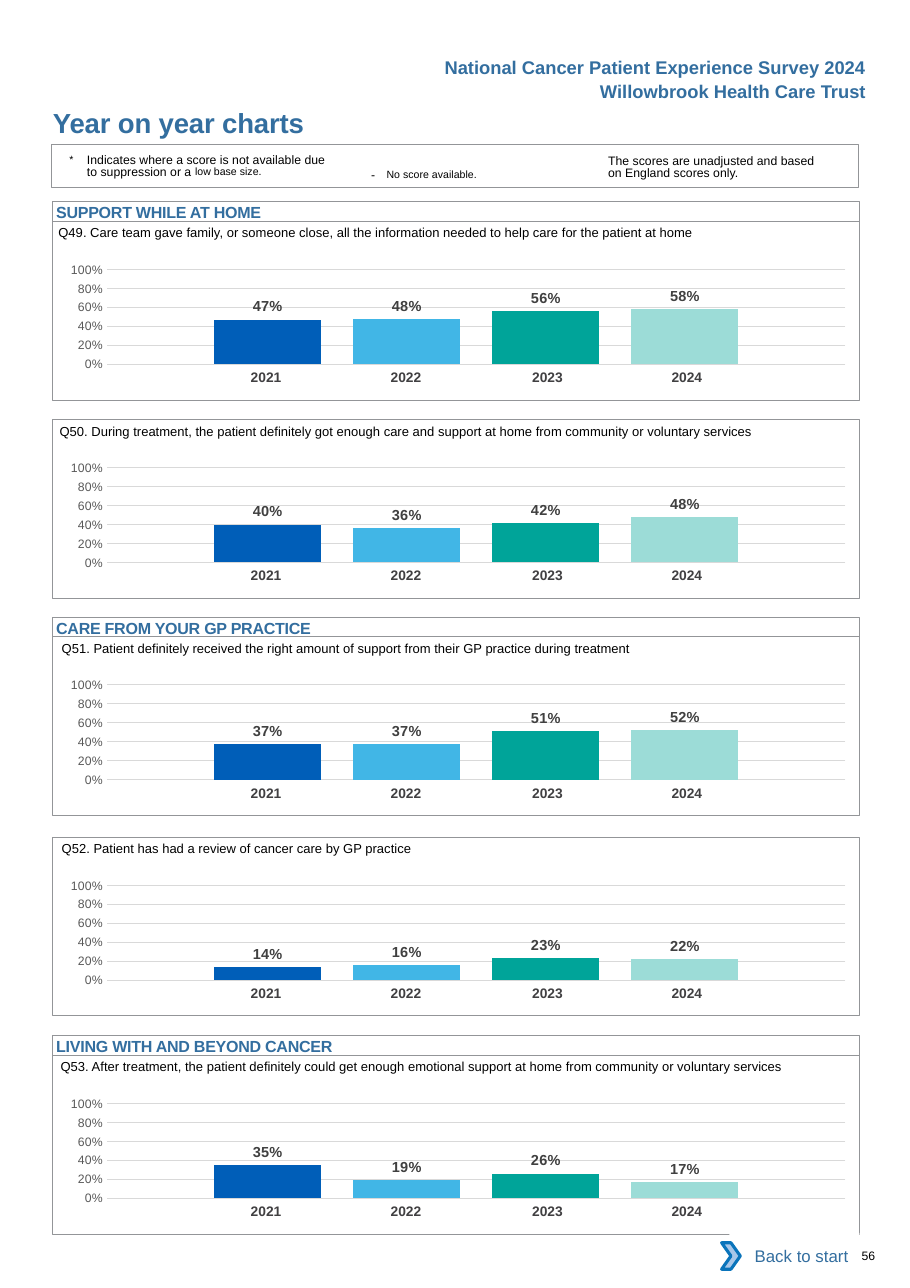
from lxml.etree import SubElement
from pptx import Presentation
from pptx.chart.data import CategoryChartData
from pptx.dml.color import RGBColor
from pptx.enum.chart import XL_CHART_TYPE as ChartType, XL_LABEL_POSITION as LabelPosition
from pptx.enum.chart import XL_TICK_MARK as TickMark
from pptx.enum.shapes import MSO_SHAPE as Preset
from pptx.enum.text import MSO_ANCHOR as Anchor, MSO_AUTO_SIZE as AutoSize, PP_ALIGN as Align
from pptx.oxml.ns import qn
from pptx.util import Inches, Pt

# Content
TITLE = "Year on year charts"
HEADERS = [(0.46, "National Cancer Patient Experience Survey 2024"),
           (0.68, "Willowbrook Health Care Trust")]
YEARS = ["2021", "2022", "2023", "2024"]
# Box top, section heading, question left, question, scores by year
PANELS = [
    (2.01, "SUPPORT WHILE AT HOME", 0.53,
     "Q49. Care team gave family, or someone close, all the information needed "
     "to help care for the patient at home", (0.47, 0.48, 0.56, 0.58)),
    (3.81, None, 0.54,
     "Q50. During treatment, the patient definitely got enough care and support "
     "at home from community or voluntary services", (0.40, 0.36, 0.42, 0.48)),
    (5.78, "CARE FROM YOUR GP PRACTICE", 0.56,
     "Q51. Patient definitely received the right amount of support from their "
     "GP practice during treatment", (0.37, 0.37, 0.51, 0.52)),
    (7.60, None, 0.56,
     "Q52. Patient has had a review of cancer care by GP practice",
     (0.14, 0.16, 0.23, 0.22)),
    (9.58, "LIVING WITH AND BEYOND CANCER", 0.55,
     "Q53. After treatment, the patient definitely could get enough emotional "
     "support at home from community or voluntary services", (0.35, 0.19, 0.26, 0.17)),
]
COLORS = {"heading": "336E9F", "text": "000000", "border": "939598", "year": "414042",
          "axis": "595959", "label": "404040", "grid": "D9D9D9", "white": "FFFFFF",
          "arrow": "A8C7E9", "arrow_line": "0A74BB"}
SERIES_COLORS = ["005EB8", "41B6E6", "00A499", "9CDCD7"]

# Formats
HEADER = {"size": Pt(12), "bold": True, "color": "heading"}
TITLE_FORMAT = {"size": Pt(18), "bold": True, "color": "heading", "spc": -10}
SECTION = {"size": Pt(10.5), "bold": True, "color": "heading", "spc": -15}
QUESTION = {"size": Pt(8.5), "color": "text"}
NOTE = {"size": Pt(8), "color": "text"}
YEAR = {"size": Pt(9), "bold": True, "color": "year"}
AXIS = {"size": Pt(8), "color": "axis"}
LABEL = {"size": Pt(9.5), "bold": True, "color": "label"}
LINK = {"size": Pt(11), "color": "heading"}
RAISED = {"size": Pt(12), "color": "text", "baseline": 3000}
BOX_LEFT, BOX_WIDTH = 0.48, 7.32
NO_TABLE_STYLE = "{2D5ABB26-0587-4C30-8999-92F81FD0307C}"


def rgb(name):
    return RGBColor.from_string(COLORS.get(name, name))


def format_font(font, values):
    font.name = "Arial"
    for key, value in values.items():
        if key == "color":
            font.color.rgb = rgb(value)
        elif key in ("size", "bold"):
            setattr(font, key, value)


def write(frame, runs, align=Align.LEFT, insets=(0, 0, 0, 0), anchor=Anchor.TOP):
    settings = {"word_wrap": True, "auto_size": AutoSize.NONE, "vertical_anchor": anchor}
    sides = ("margin_left", "margin_top", "margin_right", "margin_bottom")
    settings.update(zip(sides, map(Inches, insets)))
    for key, value in settings.items():
        setattr(frame, key, value)
    paragraph = frame.paragraphs[0]
    paragraph.alignment = align
    for text, values in runs:
        run = paragraph.add_run()
        run.text = text
        format_font(run.font, values)
        for key in ("spc", "baseline"):
            if key in values:
                run._r.get_or_add_rPr().set(key, str(values[key]))
    return paragraph


def add_text(slide, at, runs, **options):
    box = slide.shapes.add_textbox(*map(Inches, at))
    return write(box.text_frame, runs, **options)


def add_preset(slide, preset, at, fill=None, line=None, width=0.5):
    shape = slide.shapes.add_shape(preset, *map(Inches, at))
    shape.shadow.inherit = False
    if fill:
        shape.fill.solid()
        shape.fill.fore_color.rgb = rgb(fill)
    else:
        shape.fill.background()
    if line:
        shape.line.color.rgb = rgb(line)
        shape.line.width = Pt(width)
    else:
        shape.line.fill.background()
    return shape


def add_years(slide, top):
    frame = slide.shapes.add_table(1, len(YEARS), Inches(1.73), Inches(top),
                                   Inches(5.15), Inches(0.27))
    table = frame.table
    table.first_row = table.horz_banding = False
    table._tbl.tblPr.find(qn("a:tableStyleId")).text = NO_TABLE_STYLE
    columns = zip(YEARS, (1.27, 1.27, 1.34, 1.27), (0, 0, 0.04, 0.12))
    for index, (year, width, right) in enumerate(columns):
        table.columns[index].width = Inches(width)
        cell = table.cell(0, index)
        cell.fill.background()
        cell.margin_left, cell.margin_right = Inches(0.1), Inches(right)
        paragraph = cell.text_frame.paragraphs[0]
        paragraph.alignment = Align.CENTER
        run = paragraph.add_run()
        run.text = year
        format_font(run.font, YEAR)


def add_scores(slide, top, scores):
    data = CategoryChartData(number_format="0%")
    data.categories = ["1"]
    for year, score in zip(YEARS, scores):
        data.add_series(year, [score])
    chart = slide.shapes.add_chart(ChartType.COLUMN_CLUSTERED, Inches(0.39), Inches(top),
                                   Inches(7.32), Inches(1.29), data).chart
    chart.has_legend = chart.has_title = False
    chart.font.name, chart.font.size = "Calibri", Pt(10)
    chart.category_axis.visible = False
    axis = chart.value_axis
    for key, value in {"minimum_scale": 0, "maximum_scale": 1, "major_unit": 0.2,
                       "major_tick_mark": TickMark.NONE, "minor_tick_mark": TickMark.NONE,
                       "has_major_gridlines": True}.items():
        setattr(axis, key, value)
    axis.format.line.fill.background()
    axis.major_gridlines.format.line.color.rgb = rgb("grid")
    axis.major_gridlines.format.line.width = Pt(0.75)
    axis.tick_labels.number_format = "0%"
    axis.tick_labels.number_format_is_linked = False
    format_font(axis.tick_labels.font, AXIS)
    plot = chart.plots[0]
    plot.gap_width, plot.overlap, plot.vary_by_categories = 200, -30, False
    for series, color in zip(plot.series, SERIES_COLORS):
        series.format.fill.solid()
        series.format.fill.fore_color.rgb = rgb(color)
        labels = series.data_labels
        for key, value in {"show_value": True, "position": LabelPosition.OUTSIDE_END,
                           "number_format": "0%", "number_format_is_linked": False}.items():
            setattr(labels, key, value)
        format_font(labels.font, LABEL)
    # Fixed inner plot area
    area = chart._chartSpace.chart.plotArea
    for old in area.findall(qn("c:layout")):
        area.remove(old)
    layout = SubElement(area, qn("c:layout"))
    area.insert(0, layout)
    manual = SubElement(layout, qn("c:manualLayout"))
    for tag, value in (("layoutTarget", "inner"), ("xMode", "edge"), ("yMode", "edge"),
                       ("x", 0.08), ("y", 0.145), ("w", 0.915), ("h", 0.666)):
        SubElement(manual, qn("c:" + tag)).set("val", str(value))


def main():
    presentation = Presentation()
    presentation.slide_width, presentation.slide_height = Inches(8.26), Inches(11.69)
    slide = presentation.slides.add_slide(presentation.slide_layouts[5])

    # Title and header
    title = slide.shapes.title
    title.left, title.top, title.width, title.height = map(Inches, (0.47, 0.96, 4.5, 0.3))
    write(title.text_frame, [(TITLE, TITLE_FORMAT)], insets=(0.01, 0, 0, 0))
    for top, text in HEADERS:
        add_text(slide, (3.46, top, 4.5, 0.3), [(text, HEADER)], align=Align.RIGHT,
                 insets=(0.1, 0.05, 0.1, 0.05))

    # Notes on the scores
    add_preset(slide, Preset.RECTANGLE, (0.47, 1.31, 7.32, 0.39), line="border", width=0.75)
    suppressed = add_text(slide, (0.63, 1.38, 2.4, 0.3), [
        ("*\t", RAISED),
        ("Indicates where a score is not available due to suppression or a ", NOTE),
        ("low base size.", {**RAISED, "baseline": 7000})], insets=(0, 0.03, 0, 0))
    suppressed.line_spacing = Pt(8.1)
    properties = suppressed._p.get_or_add_pPr()
    properties.set("marL", str(Inches(0.16)))
    properties.set("indent", str(-Inches(0.16)))
    add_text(slide, (3.27, 1.41, 1.83, 0.24), [("- ", {**NOTE, "spc": 260}),
             ("No score available.", RAISED)], insets=(0.1, 0.05, 0.1, 0.05))
    unadjusted = add_text(slide, (5.52, 1.38, 1.98, 0.27), [
        ("The scores are unadjusted and based on England scores only.", NOTE)],
        insets=(0, 0.03, 0, 0))
    unadjusted.line_spacing = Pt(8.1)

    # Question panels
    for top, section, left, question, scores in PANELS:
        add_years(slide, top + 1.3)
        add_scores(slide, top + 0.25, scores)
        add_preset(slide, Preset.RECTANGLE, (BOX_LEFT, top, BOX_WIDTH, 1.62), line="border")
        add_text(slide, (left, top - 0.06, 7.21, 0.24), [(question, QUESTION)],
                 insets=(0, 0.09, 0, 0))
        if section:
            heading = add_preset(slide, Preset.RECTANGLE,
                                 (BOX_LEFT, top - 0.18, BOX_WIDTH, 0.18), line="border")
            write(heading.text_frame, [(section, SECTION)], insets=(0.03, 0.01, 0, 0))

    # Footer
    link = add_preset(slide, Preset.RECTANGLE, (6.62, 11.19, 1.18, 0.42), fill="white")
    write(link.text_frame, [("Back to start", LINK)], align=Align.RIGHT,
          insets=(0.1, 0.05, 0.1, 0.05), anchor=Anchor.MIDDLE)
    add_preset(slide, Preset.CHEVRON, (6.55, 11.28, 0.17, 0.24), "arrow", "arrow_line", 2)
    add_text(slide, (7.82, 11.33, 0.41, 0.13), [("56", NOTE)])
    presentation.save("out.pptx")


if __name__ == "__main__":
    main()
